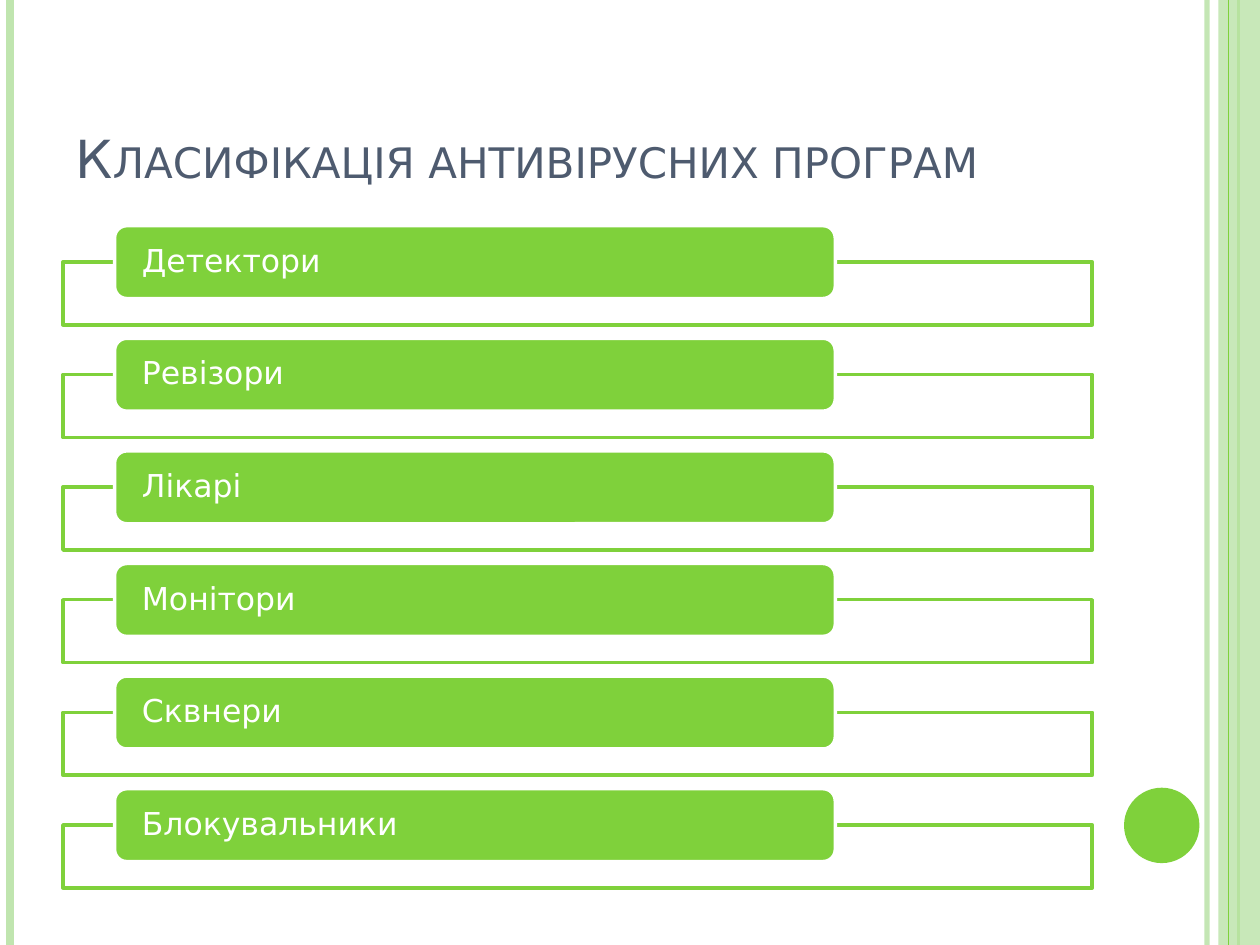
from lxml import etree
from pptx import Presentation
from pptx.dml.color import RGBColor
from pptx.enum.shapes import MSO_CONNECTOR, MSO_SHAPE
from pptx.enum.text import MSO_ANCHOR as Anchor, PP_ALIGN as Align
from pptx.oxml.ns import qn
from pptx.util import Cm, Pt

COLORS = {
    "green": "7FD13B",
    "pale": "C0E5AF",
    "slate": "4E5B6F",
    "white": "FFFFFF",
}
FONT = "DejaVu Sans"
PAGE_WIDTH, PAGE_HEIGHT = 25.4, 19.05
LEFT, CONTENT_WIDTH = 1.27, 20.75
FIRST_TOP, ROW_STEP = 4.55, 2.27
PROGRAM_TYPES = ["Детектори", "Ревізори", "Лікарі", "Монітори", "Сквнери", "Блокувальники"]


def rgb(name):
    return RGBColor.from_string(COLORS[name])


def set_opacity(color_parent, percent):
    """Make the solid colour inside a fill or line element partly transparent."""
    color = color_parent.find(".//" + qn("a:srgbClr"))
    etree.SubElement(color, qn("a:alpha"), val=str(percent * 1000))


def add_stripe(page, x, color, width, opacity=100):
    """Draw a vertical line over the full height of the page."""
    stripe = page.shapes.add_connector(
        MSO_CONNECTOR.STRAIGHT, Cm(x), Cm(0), Cm(x), Cm(PAGE_HEIGHT))
    stripe.line.color.rgb = rgb(color)
    stripe.line.width = Pt(width)
    properties = stripe._element.spPr
    if opacity < 100:
        set_opacity(properties, opacity)
    etree.SubElement(properties, qn("a:effectLst"))


def add_block(page, kind, left, top, width, height, fill, line=None, opacity=100):
    block = page.shapes.add_shape(kind, Cm(left), Cm(top), Cm(width), Cm(height))
    block.shadow.inherit = False
    block.fill.solid()
    block.fill.fore_color.rgb = rgb(fill)
    if opacity < 100:
        set_opacity(block._element.spPr, opacity)
    if line:
        block.line.color.rgb = rgb(line)
        block.line.width = Pt(2)
    else:
        block.line.fill.background()
    return block


def write(box, text, size, color, anchor, side_margin):
    """Put one left-aligned run into a box and return its paragraph and run."""
    frame = box.text_frame
    frame.word_wrap = True
    frame.vertical_anchor = anchor
    frame.margin_left = frame.margin_right = Cm(side_margin)
    para = frame.paragraphs[0]
    para.alignment = Align.LEFT
    span = para.add_run()
    span.text = text
    span.font.name = FONT
    span.font.size = Pt(size)
    span.font.color.rgb = rgb(color)
    return para, span


def add_frame(page):
    """Draw the stripes, side band and dot that decorate the page."""
    add_stripe(page, 24.33, "pale", 3, opacity=93)
    add_stripe(page, 0.21, "pale", 4.5)
    add_stripe(page, 24.97, "green", 1.5)
    add_block(page, MSO_SHAPE.RECTANGLE, 24.56, 0, PAGE_WIDTH - 24.56, PAGE_HEIGHT,
              "pale", opacity=87)
    add_stripe(page, 24.77, "green", 0.75)
    add_block(page, MSO_SHAPE.OVAL, 22.66, 15.88, 1.52, 1.52, "green")


def add_title(page, text):
    box = page.shapes.add_textbox(Cm(LEFT), Cm(0.76), Cm(CONTENT_WIDTH), Cm(3.18))
    _, span = write(box, text, 30, "slate", Anchor.BOTTOM, 0.25)
    span.font._element.set("cap", "small")


def add_row(page, top, text):
    """Draw an outlined bar with a rounded label over its upper edge."""
    add_block(page, MSO_SHAPE.RECTANGLE, LEFT, top + 0.73, CONTENT_WIDTH, 1.27,
              "white", "green", opacity=90)
    label = add_block(page, MSO_SHAPE.ROUNDED_RECTANGLE, 2.31, top, 14.53, 1.47,
                      "green", "white")
    para, _ = write(label, text, 18, "white", Anchor.MIDDLE, 0.48)
    label.text_frame.margin_top = label.text_frame.margin_bottom = Cm(0)
    para.line_spacing = 0.9


def main():
    deck = Presentation()
    deck.slide_width, deck.slide_height = Cm(PAGE_WIDTH), Cm(PAGE_HEIGHT)
    page = deck.slides.add_slide(deck.slide_layouts[6])
    add_frame(page)
    add_title(page, "Класифікація антивірусних програм")
    for index, program_type in enumerate(PROGRAM_TYPES):
        add_row(page, FIRST_TOP + index * ROW_STEP, program_type)
    deck.save("out.pptx")


if __name__ == "__main__":
    main()
